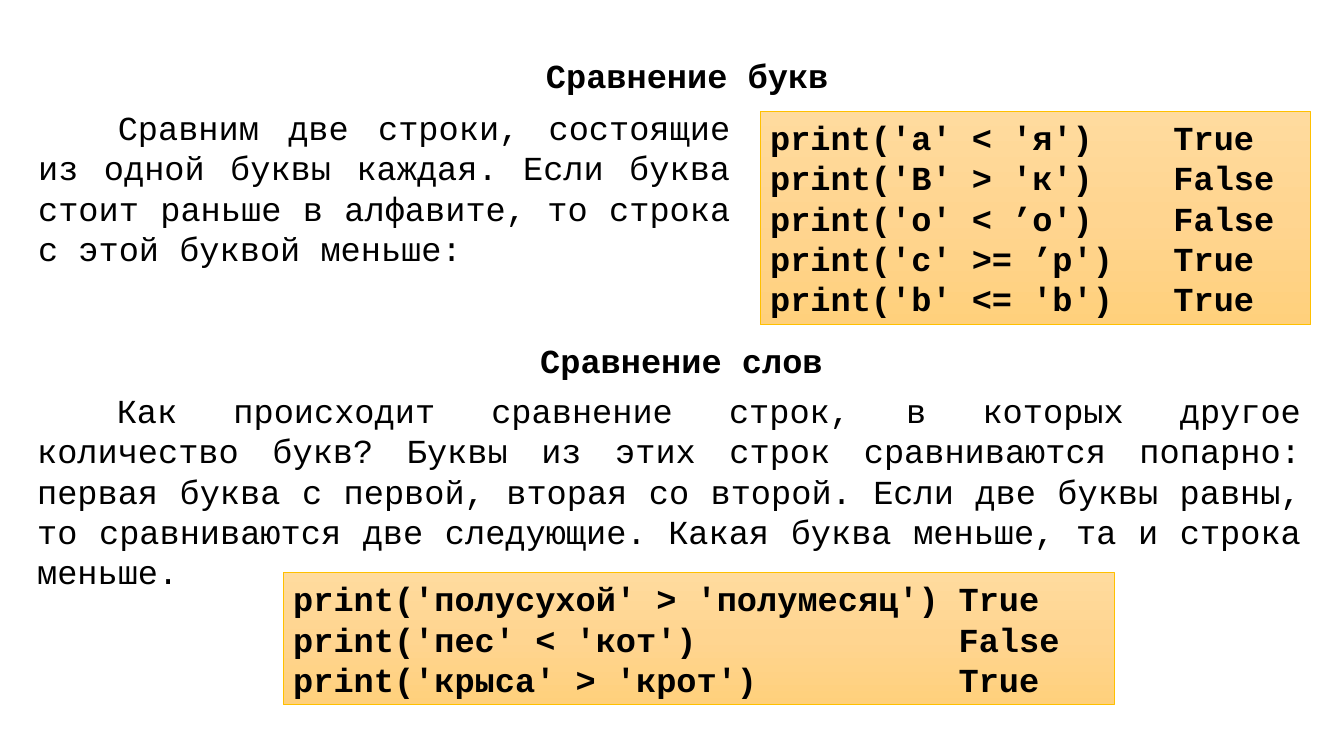
from copy import deepcopy
from dataclasses import dataclass

from pptx import Presentation, util as u
from pptx.dml.color import RGBColor
from pptx.enum import shapes, text
from pptx.oxml import parse_xml
from pptx.oxml.ns import nsdecls, qn

PX = u.Inches(1) // 100


@dataclass(frozen=True)
class Theme:
    font: str = "Courier New"
    size: int = 24
    ink: str = "000000"
    code_line: str = "FFC000"
    code_fill: tuple = ((0, "FFDB9E"), (0.5, "FFD590"), (1, "FFD07C"))
    paragraph_indent: int = 79


THEME = Theme()
LEFT, CENTER, JUSTIFY = text.PP_ALIGN.LEFT, text.PP_ALIGN.CENTER, text.PP_ALIGN.JUSTIFY

LETTERS_RULE = ("Сравним две строки, состоящие из одной буквы каждая. Если буква стоит "
                "раньше в алфавите, то строка с этой буквой меньше:")
LETTERS_CODE = ["print('a'\t< 'я')\tTrue",
                "print('B'\t> 'к')\tFalse",
                "print('o'\t< ’o')\tFalse",
                "print('c'\t>= ’p')\tTrue",
                "print('b'\t<= 'b')\tTrue"]
WORDS_RULE = ("Как происходит сравнение строк, в которых другое количество букв? Буквы из "
              "этих строк сравниваются попарно: первая буква с первой, вторая со второй. "
              "Если две буквы равны, то сравниваются две следующие. Какая буква меньше, "
              "та и строка меньше.")
WORDS_CODE = ["print('полусухой' > 'полумесяц')\tTrue",
              "print('пec' < 'кот')\tFalse",
              "print('крыса' > 'крот')\tTrue"]


def px_box(box):
    return [length * PX for length in box]


def write(shape, lines, align=LEFT, bold=False, indent=0, tabs=()):
    frame = shape.text_frame
    frame.word_wrap = True
    frame.auto_size = text.MSO_AUTO_SIZE.SHAPE_TO_FIT_TEXT
    frame.text = "\n".join(lines)
    for paragraph in frame.paragraphs:
        paragraph.alignment = align
        properties = paragraph._p.get_or_add_pPr()
        if indent:
            properties.set("marL", "0")
            properties.set("indent", str(indent * PX))
        if tabs:
            stops = "".join(f'<a:tab pos="{tab * PX}" algn="l"/>' for tab in tabs)
            properties.append(parse_xml(f'<a:tabLst {nsdecls("a")}>{stops}</a:tabLst>'))
        for run in paragraph.runs:
            run.font.name = THEME.font
            run.font.size = u.Pt(THEME.size)
            run.font.bold = bold
            run.font.color.rgb = RGBColor.from_string(THEME.ink)


def add_heading(slide, box, title, align):
    write(slide.shapes.add_textbox(*px_box(box)), [title], align, bold=True)


def add_rule(slide, box, rule):
    write(slide.shapes.add_textbox(*px_box(box)), [rule], JUSTIFY,
          indent=THEME.paragraph_indent)


def add_code(slide, box, lines, tabs):
    panel = slide.shapes.add_shape(shapes.MSO_SHAPE.RECTANGLE, *px_box(box))
    panel.shadow.inherit = False
    panel.line.color.rgb = RGBColor.from_string(THEME.code_line)
    panel.line.width = u.Pt(0.5)
    # Three-stop gradient running from top to bottom
    panel.fill.gradient()
    panel.fill.gradient_angle = 270
    stop_list = panel._element.spPr.find(qn("a:gradFill")).find(qn("a:gsLst"))
    stop_list.insert(1, deepcopy(stop_list[0]))
    for stop, (position, colour) in zip(panel.fill.gradient_stops, THEME.code_fill):
        stop.position = position
        stop.color.rgb = RGBColor.from_string(colour)
    write(panel, lines, bold=True, tabs=tabs)


def add_letters_section(slide, left, top):
    add_heading(slide, (left + 320, top, 667, 50), "Сравнение букв", CENTER)
    add_rule(slide, (left, top + 51, 706, 172), LETTERS_RULE)
    add_code(slide, (left + 726, top + 60, 546, 212), LETTERS_CODE, tabs=(200, 400))


def add_words_section(slide, left, top):
    add_heading(slide, (left + 498, top, 333, 50), "Сравнение слов", LEFT)
    add_rule(slide, (left - 1, top + 50, 1273, 212), WORDS_RULE)
    add_code(slide, (left + 253, top + 236, 824, 131), WORDS_CODE, tabs=(660,))


def main():
    deck = Presentation()
    deck.slide_width, deck.slide_height = 1333 * PX, 750 * PX
    slide = deck.slides.add_slide(deck.slide_layouts[6])
    add_letters_section(slide, 28, 50)
    add_words_section(slide, 28, 332)
    deck.save("out.pptx")


if __name__ == "__main__":
    main()
